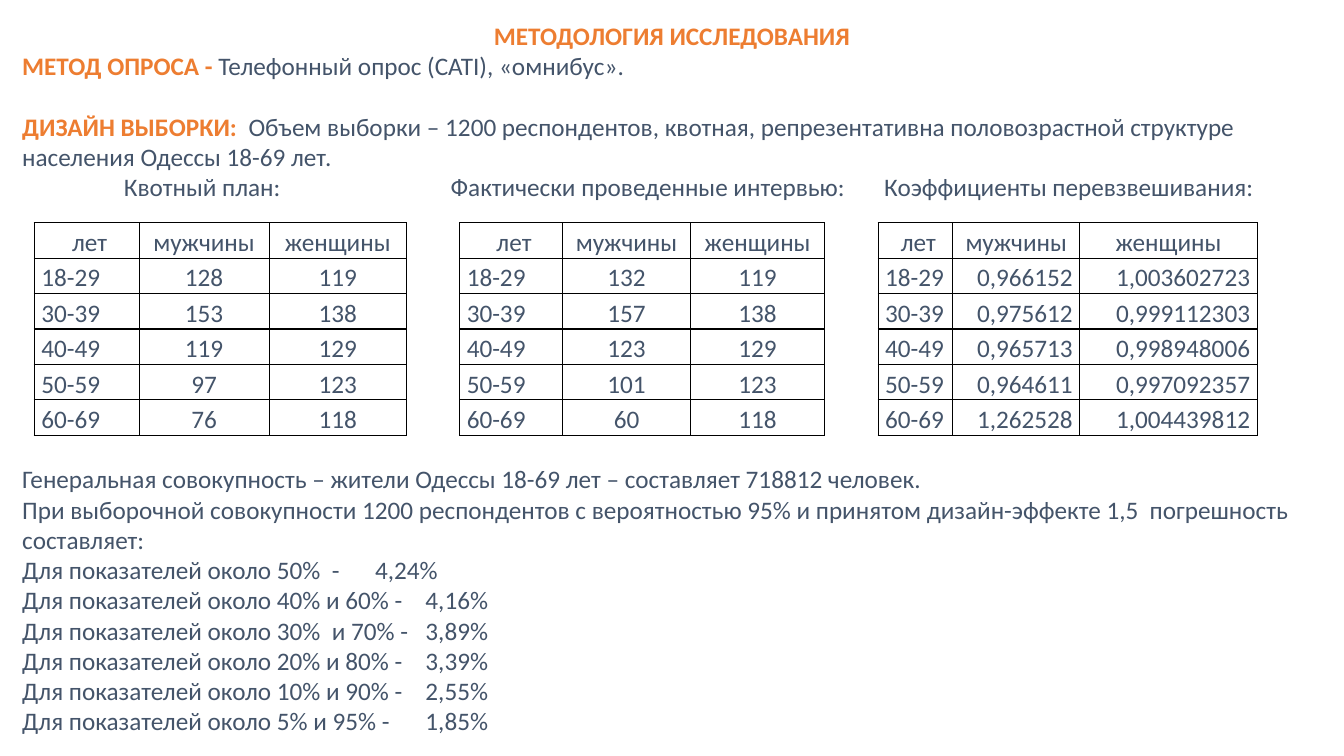
"""Build the survey methodology slide with its three age-by-sex tables."""
from dataclasses import dataclass

from lxml import etree
from pptx import Presentation, util as u
from pptx.dml.color import RGBColor
from pptx.enum import text
from pptx.oxml import ns

PX = 9144
ORANGE, SLATE, BLACK = "ED7D31", "44546A", "000000"
FONT, SIZE = "Calibri", 18
LINE_GAP = 21.6
LEFT, WIDTH = 22, 1289
TABLE_TOP, ROW_HEIGHT, CELL_MARGIN = 221, 34, 7
CAPTION_TOP, LINE_HEIGHT = 170, 30
TAB_STOP = 400
AGES = ("18-29", "30-39", "40-49", "50-59", "60-69")
ALIGN = text.PP_ALIGN


@dataclass
class AgeTable:
    caption: str
    caption_left: int
    left: int
    widths: tuple[int, int, int]
    men: tuple[str, ...]
    women: tuple[str, ...]
    align: ALIGN = ALIGN.CENTER


@dataclass
class Line:
    body: str
    label: str = ""
    gap: float = 0


TABLES = (
    AgeTable("Квотный план:", 123, 34, (104, 129, 136),
             ("128", "153", "119", "97", "76"),
             ("119", "138", "129", "123", "118")),
    AgeTable("Фактически проведенные интервью:", 447, 456, (102, 127, 133),
             ("132", "157", "123", "101", "60"),
             ("119", "138", "129", "123", "118")),
    AgeTable("Коэффициенты перевзвешивания:", 877, 871, (74, 126, 176),
             ("0,966152", "0,975612", "0,965713", "0,964611", "1,262528"),
             ("1,003602723", "0,999112303", "0,998948006", "0,997092357", "1,004439812"),
             ALIGN.RIGHT),
)
DESIGN = (
    Line("Телефонный опрос (CATI), «омнибус».", "МЕТОД ОПРОСА - "),
    Line("Объем выборки – 1200 респондентов, квотная, репрезентативна половозрастной "
         "структуре населения Одессы 18-69 лет.", "ДИЗАЙН ВЫБОРКИ:  ", LINE_GAP),
)
ERRORS = (("50% ", "4,24%"), ("40% и 60%", "4,16%"), ("30%  и 70%", "3,89%"),
          ("20% и 80%", "3,39%"), ("10% и 90%", "2,55%"), ("5% и 95%", "1,85%"))
ACCURACY = (
    Line("Генеральная совокупность – жители Одессы 18-69 лет – составляет 718812 человек."),
    Line("При выборочной совокупности 1200 респондентов с вероятностью 95% "
         "и принятом дизайн-эффекте 1,5  погрешность составляет:"),
    *(Line(f"Для показателей около {share} -\t{error}") for share, error in ERRORS),
)


def px(n: int) -> u.Emu:
    return u.Emu(n * PX)


def color(value: str) -> RGBColor:
    return RGBColor.from_string(value)


def style(r, fill: str = SLATE, bold: bool = False) -> None:
    r.font.name, r.font.size, r.font.bold = FONT, u.Pt(SIZE), bold
    r.font.color.rgb = color(fill)


def place(sp, left: int, top: int, width: int, height: int):
    """Position a text shape and return its frame without insets."""
    sp.left, sp.top, sp.width, sp.height = map(px, (left, top, width, height))
    tf = sp.text_frame
    tf.margin_left = tf.margin_right = tf.margin_top = tf.margin_bottom = 0
    tf.word_wrap, tf.auto_size = True, text.MSO_AUTO_SIZE.NONE
    tf.vertical_anchor = text.MSO_ANCHOR.TOP
    return tf


def fill_body(sp, lines: tuple[Line, ...], top: int, height: int) -> None:
    """Write unbulleted lines with optional orange labels."""
    tf = place(sp, LEFT, top, WIDTH, height)
    for i, line in enumerate(lines):
        p = tf.paragraphs[0] if i == 0 else tf.add_paragraph()
        p.text = line.label or line.body
        style(p.runs[0], ORANGE if line.label else SLATE, bool(line.label))
        if line.label:
            r = p.add_run()
            r.text = line.body
            style(r)
        p.space_before, p.space_after, p.line_spacing = u.Pt(line.gap), u.Pt(0), 1.0
        props = p._p.get_or_add_pPr()
        props.set("marL", "0")
        props.set("indent", "0")
        etree.SubElement(props, ns.qn("a:buNone"))
        tabs = etree.SubElement(props, ns.qn("a:tabLst"))
        etree.SubElement(tabs, ns.qn("a:tab"), pos=str(px(TAB_STOP)), algn="l")


def add_borders(cell) -> None:
    """Draw a thin black line on each side of a cell."""
    props = cell._tc.get_or_add_tcPr()
    for i, side in enumerate(("lnL", "lnR", "lnT", "lnB")):
        ln = etree.Element(ns.qn(f"a:{side}"), w=str(u.Pt(1)))
        fill = etree.SubElement(ln, ns.qn("a:solidFill"))
        etree.SubElement(fill, ns.qn("a:srgbClr"), val=BLACK)
        props.insert(i, ln)


def write_cell(cell, value: str, align: ALIGN) -> None:
    cell.text = value
    cell.margin_left = cell.margin_right = px(CELL_MARGIN)
    cell.margin_top = cell.margin_bottom = 0
    cell.vertical_anchor = text.MSO_ANCHOR.MIDDLE
    p = cell.text_frame.paragraphs[0]
    p.alignment, p.line_spacing = align, 1.15
    style(p.runs[0])
    cell.fill.background()
    add_borders(cell)


def add_age_table(s, spec: AgeTable) -> None:
    """Add a caption and the table beneath it."""
    sp = s.shapes.add_textbox(0, 0, 0, 0)
    tf = place(sp, spec.caption_left, CAPTION_TOP, 420, LINE_HEIGHT)
    tf.text = spec.caption
    style(tf.paragraphs[0].runs[0])

    rows = [(" лет", "мужчины", "женщины"), *zip(AGES, spec.men, spec.women)]
    frame = s.shapes.add_table(len(rows), len(spec.widths), px(spec.left), px(TABLE_TOP),
                               px(sum(spec.widths)), px(ROW_HEIGHT * len(rows)))
    table = frame.table
    table.first_row = table.horz_banding = False
    for column, width in zip(table.columns, spec.widths):
        column.width = px(width)
    for i, row in enumerate(rows):
        for j, value in enumerate(row):
            align = ALIGN.CENTER if i == 0 else ALIGN.LEFT if j == 0 else spec.align
            write_cell(table.cell(i, j), value, align)


def main() -> None:
    prs = Presentation()
    prs.slide_width, prs.slide_height = px(1333), px(750)
    s = prs.slides.add_slide(prs.slide_layouts[3])
    title, design, accuracy = s.placeholders

    tf = place(title, LEFT, 20, WIDTH, LINE_HEIGHT)
    tf.text = "МЕТОДОЛОГИЯ ИССЛЕДОВАНИЯ"
    tf.paragraphs[0].alignment = ALIGN.CENTER
    style(tf.paragraphs[0].runs[0], ORANGE, True)
    fill_body(design, DESIGN, 50, 4 * LINE_HEIGHT)
    fill_body(accuracy, ACCURACY, 460, 9 * LINE_HEIGHT)
    for spec in TABLES:
        add_age_table(s, spec)
    prs.save("out.pptx")


if __name__ == "__main__":
    main()
